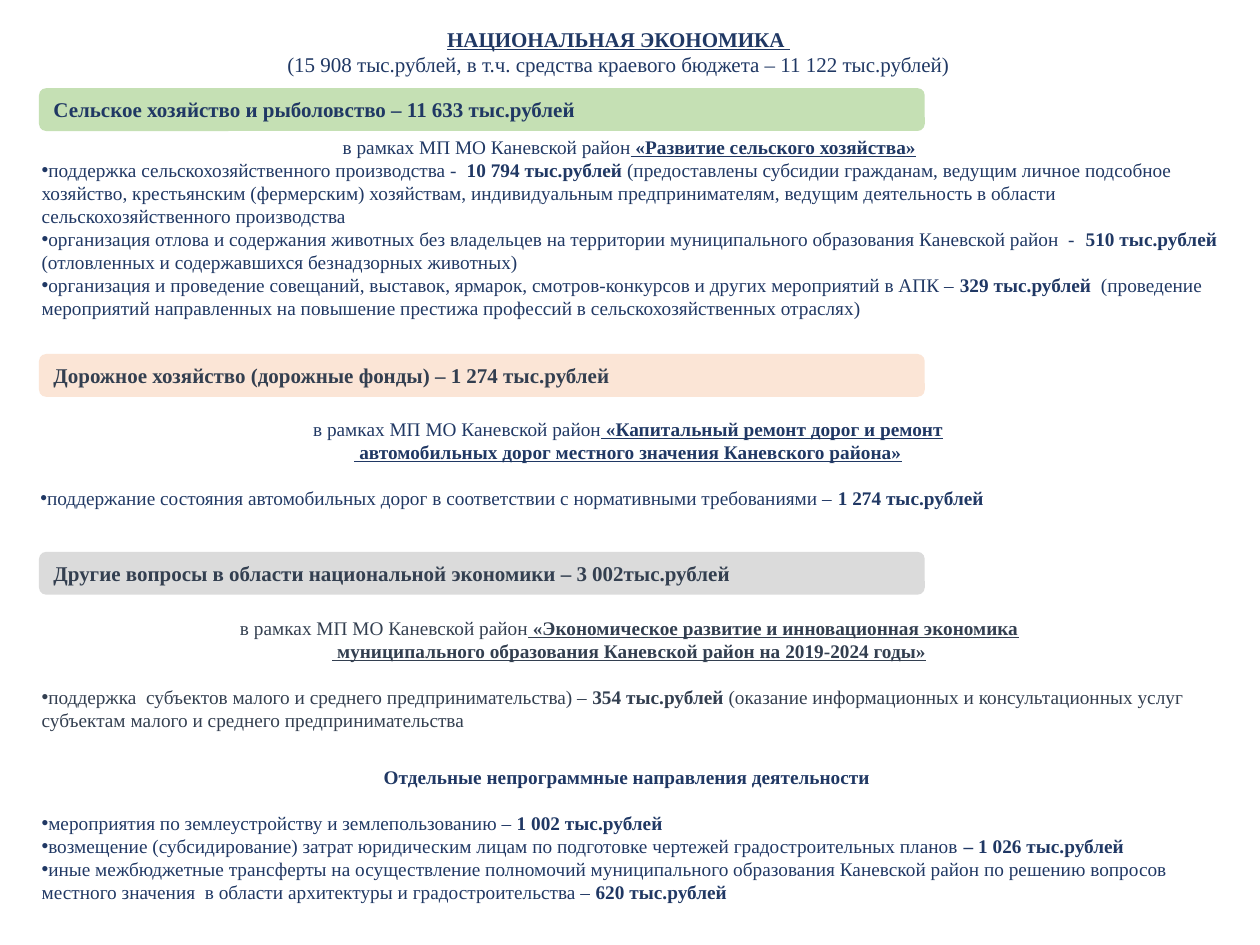
from dataclasses import dataclass

from lxml import etree
from pptx import Presentation
from pptx.dml.color import RGBColor
from pptx.enum.shapes import MSO_SHAPE
from pptx.enum.text import MSO_ANCHOR, MSO_AUTO_SIZE, PP_ALIGN
from pptx.oxml.ns import qn
from pptx.util import Inches, Pt

ROUNDED = MSO_SHAPE.ROUNDED_RECTANGLE
TOP, MIDDLE = MSO_ANCHOR.TOP, MSO_ANCHOR.MIDDLE
FIT = MSO_AUTO_SIZE.SHAPE_TO_FIT_TEXT
LEFT, CENTER = PP_ALIGN.LEFT, PP_ALIGN.CENTER


@dataclass(frozen=True)
class Theme:
    font: str = "Times New Roman"
    navy: str = "203864"
    slate: str = "333F50"
    green: str = "C5E0B4"
    peach: str = "FBE5D6"
    grey: str = "DBDBDB"
    heading: float = 12
    body: float = 11
    gap: float = 13.2


@dataclass(frozen=True)
class Line:
    runs: tuple
    bullet: bool = False
    gap: bool = False


class SlideBuilder:
    def __init__(self, slide, theme):
        self.slide = slide
        self.theme = theme

    def place(self, sp, x, y, w, h):
        sp.left, sp.top, sp.width, sp.height = map(Inches, (x, y, w, h))

    def fill_text(self, tf, lines, size, color):
        for i, line in enumerate(lines):
            p = tf.paragraphs[0] if i == 0 else tf.add_paragraph()
            pPr = p._p.get_or_add_pPr()
            pPr.set("marL", "0")
            pPr.set("indent", "0")
            p.alignment = LEFT if line.bullet else CENTER
            p.line_spacing = 1.0
            p.space_before = Pt(self.theme.gap if line.gap else 0)
            p.space_after = Pt(0)
            if line.bullet:
                etree.SubElement(pPr, qn("a:buChar")).set("char", "•")
            else:
                etree.SubElement(pPr, qn("a:buNone"))
            for text, style in line.runs:
                r = p.add_run()
                r.text = text
                r.font.name = self.theme.font
                r.font.size = Pt(size)
                r.font.color.rgb = RGBColor.from_string(color)
                r.font.bold = "b" in style
                r.font.underline = "u" in style

    def text(self, sp, box, lines, size, color):
        self.place(sp, *box)
        tf = sp.text_frame
        tf.word_wrap = True
        tf.auto_size = FIT
        tf.vertical_anchor = TOP
        self.fill_text(tf, lines, size, color)

    def title(self, box, lines):
        self.text(self.slide.shapes.title, box, lines, self.theme.heading, self.theme.navy)

    def body(self, idx, box, lines, color):
        self.text(self.slide.placeholders[idx], box, lines, self.theme.body, color)

    def band(self, y, text, fill, color):
        sp = self.slide.shapes.add_shape(ROUNDED, Inches(0.31), Inches(y), Inches(7.03), Inches(0.34))
        sp.shadow.inherit = False
        sp.fill.solid()
        sp.fill.fore_color.rgb = RGBColor.from_string(fill)
        sp.line.fill.background()
        tf = sp.text_frame
        tf.word_wrap = True
        tf.vertical_anchor = MIDDLE
        self.fill_text(tf, [Line(((text, "b"),))], self.theme.heading, color)
        tf.paragraphs[0].alignment = LEFT


def item(*runs, gap=False):
    return Line(runs, bullet=True, gap=gap)


def programme(name, *more):
    first = Line((("в рамках МП МО Каневской район", ""), (name, "bu")))
    return [first] + [Line(((text, "bu"),)) for text in more]


def main():
    theme = Theme()
    prs = Presentation()
    prs.slide_width, prs.slide_height = Inches(10), Inches(7.5)
    slide = prs.slides.add_slide(prs.slide_layouts.get_by_name("Comparison"))
    s = SlideBuilder(slide, theme)

    s.title((2.17, 0.16, 5.48, 0.5), [
        Line((("НАЦИОНАЛЬНАЯ ЭКОНОМИКА ", "bu"),)),
        Line((("(15 908 тыс.рублей, в т.ч. средства краевого бюджета – 11 122 тыс.рублей)", ""),)),
    ])

    bands = [
        (0.7, "Сельское хозяйство и рыболовство – 11 633 тыс.рублей", theme.green, theme.navy),
        (2.81, "Дорожное хозяйство (дорожные фонды) – 1 274 тыс.рублей", theme.peach, theme.slate),
        (4.38, "Другие вопросы в области национальной экономики – 3 002тыс.рублей", theme.grey, theme.slate),
    ]
    for band in bands:
        s.band(*band)

    agriculture = programme(" «Развитие сельского хозяйства»") + [
        item(("поддержка сельскохозяйственного производства -  ", ""),
             ("10 794 тыс.рублей ", "b"),
             ("(предоставлены субсидии гражданам, ведущим личное подсобное хозяйство, "
              "крестьянским (фермерским) хозяйствам, индивидуальным предпринимателям, "
              "ведущим деятельность в области сельскохозяйственного производства", "")),
        item(("организация отлова и содержания животных без владельцев на территории "
              "муниципального образования Каневской район  - ", ""),
             (" 510 тыс.рублей ", "b"),
             ("(отловленных и содержавшихся безнадзорных животных)", "")),
        item(("организация и проведение совещаний, выставок, ярмарок, смотров-конкурсов "
              "и других мероприятий в АПК – ", ""),
             ("329 тыс.рублей  ", "b"),
             ("(проведение мероприятий направленных на повышение престижа профессий "
              "в сельскохозяйственных отраслях)", "")),
    ]
    roads = programme(" «Капитальный ремонт дорог и ремонт",
                      " автомобильных дорог местного значения Каневского района»") + [
        item(("поддержание состояния автомобильных дорог в соответствии "
              "с нормативными требованиями – ", ""),
             ("1 274 тыс.рублей", "b"), gap=True),
    ]
    economy = programme(" «Экономическое развитие и инновационная экономика",
                        " муниципального образования Каневской район на 2019-2024 годы»") + [
        item(("поддержка  субъектов малого и среднего предпринимательства) – ", ""),
             ("354 тыс.рублей ", "b"),
             ("(оказание информационных и консультационных услуг субъектам малого "
              "и среднего предпринимательства", ""), gap=True),
    ]
    other = [
        Line((("Отдельные непрограммные направления деятельности ", "b"),)),
        item(("мероприятия по землеустройству и землепользованию – ", ""),
             ("1 002 тыс.рублей", "b"), gap=True),
        item(("возмещение (субсидирование) затрат юридическим лицам по подготовке "
              "чертежей градостроительных планов", ""),
             (" – 1 026 тыс.рублей", "b")),
        item(("иные межбюджетные трансферты на осуществление полномочий муниципального "
              "образования Каневской район по решению вопросов местного значения  "
              "в области архитектуры и градостроительства – ", ""),
             ("620 тыс.рублей", "b")),
    ]
    s.body(1, (0.23, 1.02, 9.53, 1.58), agriculture, theme.navy)
    s.body(2, (0.22, 3.26, 9.53, 0.84), roads, theme.navy)
    s.body(3, (0.23, 4.84, 9.53, 1.06), economy, theme.slate)
    s.body(4, (0.23, 6.02, 9.53, 1.21), other, theme.navy)

    prs.save("out.pptx")


if __name__ == "__main__":
    main()
